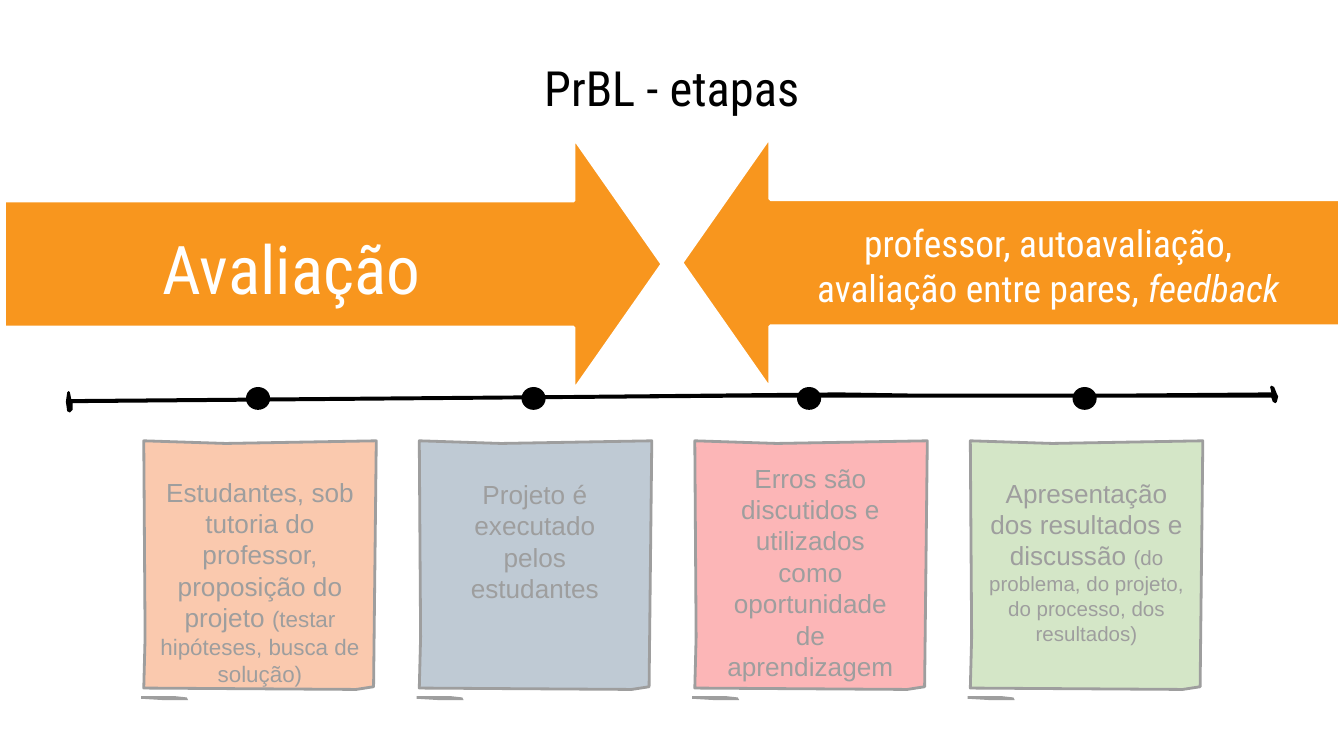
from lxml import etree
from pptx import Presentation
from pptx import util as u
from pptx.dml import color
from pptx.enum import shapes, text
from pptx.oxml import ns

COLORS = {"ink": "000000", "paper": "FFFFFF", "arrow": "F8961E", "orange": "F3722C",
          "blue": "577590", "red": "F94144", "green": "90BE6D"}
HEADING, BODY = "Roboto Condensed", "Arial"

AXIS = [(8.97, 0), (8.96, 0.01), (8.97, 0.05), (7.77, 0.06), (6.36, 0.06), (5.75, 0.05),
        (3.75, 0.07), (0.04, 0.1), (0.03, 0.05), (0.02, 0.04), (0.01, 0.05), (0, 0.12),
        (0.01, 0.19), (0.03, 0.2), (0.05, 0.18), (0.05, 0.13), (3.59, 0.1), (4.9, 0.09),
        (5.7, 0.09), (7.05, 0.09), (8.97, 0.09), (8.98, 0.12), (9, 0.13), (9.01, 0.12),
        (9.02, 0.08), (9.01, 0.06), (8.99, 0.01)]
NOTE = [(1.73, 0), (0.61, 0.02), (0, 0), (0.01, 1.46), (0, 1.84), (1.58, 1.85), (1.71, 1.83)]
STROKE = [(0.07, 0), (0, 0), (0, 0.02), (0.17, 0.03), (0.35, 0.03), (0.34, 0.01),
          (0.25, 0), (0.18, 0)]

STEPS = [
    ("orange", (0, 0.5, 1.73, 1.09),
     [("Estudantes, sob tutoria do professor, proposição do projeto ", 14),
      ("(testar hipóteses, busca de solução)", 12)]),
    ("blue", (0.11, 0.2, 1.5, 1.09), [("Projeto é executado pelos estudantes", 14)]),
    ("red", (0.11, 0.43, 1.5, 1.09),
     [("Erros são discutidos e utilizados como oportunidade de aprendizagem", 14)]),
    ("green", (0, 0.35, 1.73, 1.09),
     [("Apresentação dos resultados e discussão ", 14),
      ("(do problema, do projeto, do processo, dos resultados)", 11)]),
]


def rgb(name):
    return color.RGBColor.from_string(COLORS[name])


def inches(box):
    return [u.Inches(value) for value in box]


def paint(shape, fill, line=None, width=2):
    shape.shadow.inherit = False
    shape.fill.solid()
    shape.fill.fore_color.rgb = rgb(fill)
    if line:
        shape.line.color.rgb = rgb(line)
        shape.line.width = u.Pt(width)
    else:
        shape.line.fill.background()


def add_preset(page, kind, box, fill, line=None):
    shape = page.shapes.add_shape(kind, *inches(box))
    paint(shape, fill, line)
    return shape


def add_outline(page, left, top, points, fill, line=None):
    corners = [inches((left + x, top + y)) for x, y in points]
    builder = page.shapes.build_freeform(*corners[0])
    builder.add_line_segments(corners[1:], close=True)
    paint(builder.convert_to_shape(), fill, line, 1.5)


def write(frame, spans, font, ink):
    para = frame.paragraphs[0]
    para.text = spans[0][0]
    para.alignment = text.PP_ALIGN.CENTER
    for run in para.runs:
        run.font.size = u.Pt(spans[0][1])
    for words, size in spans[1:]:
        span = para.add_run()
        span.text = words
        span.font.size = u.Pt(size)
    for run in para.runs:
        run.font.name = font
        run.font.color.rgb = rgb(ink)


def add_text(page, box, spans, font, ink):
    frame = page.shapes.add_textbox(*inches(box)).text_frame
    frame.word_wrap = True
    write(frame, spans, font, ink)
    return frame


def add_title(page, box):
    title = page.shapes.title
    title.left, title.top, title.width, title.height = inches(box)
    title.text_frame.vertical_anchor = text.MSO_ANCHOR.MIDDLE
    write(title.text_frame, [("PrBL - etapas", 26)], HEADING, "ink")


def add_step(page, left, top, fill, text_box, spans):
    add_outline(page, left, top, NOTE, fill, "ink")
    add_outline(page, left - 0.02, top + 1.9, STROKE, "ink")
    add_preset(page, shapes.MSO_SHAPE.OVAL, (left + 0.76, top - 0.4, 0.18, 0.17), "ink")
    x, y, width, height = text_box
    frame = add_text(page, (left + x, top + y, width, height), spans, BODY, "ink")
    frame.vertical_anchor = text.MSO_ANCHOR.MIDDLE
    frame.margin_top = frame.margin_bottom = u.Inches(0.1)


def add_timeline(page, left, top):
    add_outline(page, left, top, AXIS, "ink")
    for index, (fill, text_box, spans) in enumerate(STEPS):
        add_step(page, left + 0.58 + 2.05 * index, top + 0.41, fill, text_box, spans)


def add_arrow(page, box, rotation):
    left, top, length, breadth = box
    upright = (left + (length - breadth) / 2, top + (breadth - length) / 2, breadth, length)
    arrow = add_preset(page, shapes.MSO_SHAPE.DOWN_ARROW, upright, "arrow", "paper")
    arrow.rotation = rotation
    arrow.adjustments[0], arrow.adjustments[1] = 0.5, 0.35


def add_assessment(page, box):
    left, top, width, height = box
    add_preset(page, shapes.MSO_SHAPE.RECTANGLE, box, "paper", "paper")
    add_arrow(page, (left + 0.28, top + 0.02, 4.9, 1.89), 270)
    add_arrow(page, (left + 5.32, top + 0.01, 4.9, 1.89), 90)
    add_text(page, (left + 0.31, top + 0.64, 4.22, 0.71), [("Avaliação", 36)], HEADING, "paper")
    frame = add_text(page, (left + 5.94, top + 0.59, 4.22, 0.77),
                     [("professor, autoavaliação,\vavaliação entre pares, ", 20),
                      ("feedback", 20)], HEADING, "paper")
    frame.paragraphs[0].runs[-1].font.italic = True


def add_veil(page, box):
    veil = add_preset(page, shapes.MSO_SHAPE.RECTANGLE, box, "paper", "paper")
    tint = veil.fill._xPr.find(".//" + ns.qn("a:srgbClr"))
    etree.SubElement(tint, ns.qn("a:alpha"), val="62000")


def main():
    deck = Presentation()
    deck.slide_width = u.Inches(10)
    deck.slide_height = deck.slide_width * 9 // 16
    page = deck.slides.add_slide(deck.slide_layouts[5])
    add_title(page, (0.5, 0.33, 9, 0.63))
    add_timeline(page, 0.49, 2.87)
    add_assessment(page, (-0.25, 1, 10.74, 1.85))
    add_veil(page, (-0.2, 3.18, 10.74, 2.45))
    deck.save("out.pptx")


if __name__ == "__main__":
    main()
